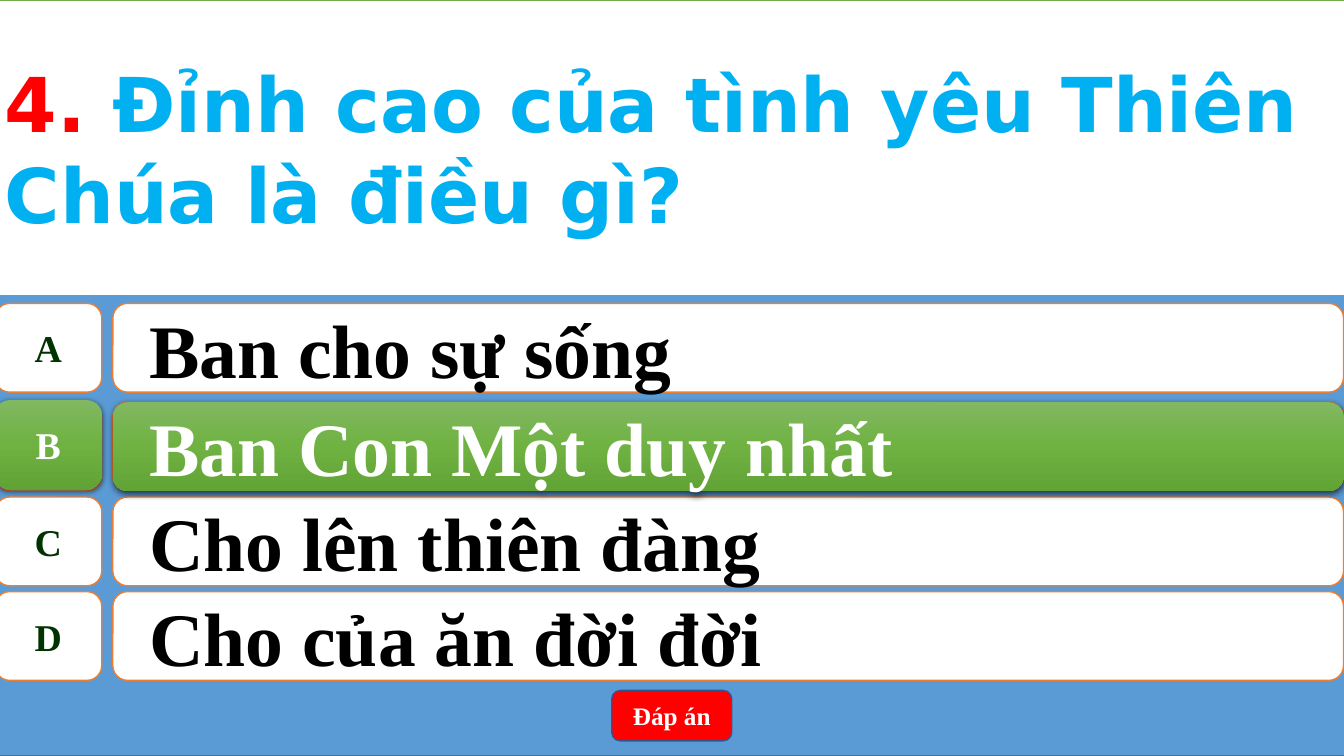
import copy
import lxml.etree
import pptx
import pptx.dml.color
import pptx.enum.shapes
import pptx.enum.text
import pptx.oxml
import pptx.oxml.ns
import pptx.util

Pt = pptx.util.Pt
qn = pptx.oxml.ns.qn
KIND = pptx.enum.shapes.MSO_SHAPE
ALIGN = pptx.enum.text.PP_ALIGN

HUES = {
    "blue": "5B9BD5", "navy": "43739E", "white": "FFFFFF", "orange": "ED7D31",
    "dark": "003300", "black": "000000", "red": "FF0000", "edge": "325491",
    "green": "70AD47", "sky": "00B0F0",
    "light": "81B861", "mid": "6FB242", "deep": "62A336",
}
SERIF = "Times New Roman"
SANS = "DejaVu Sans"
LEFT, WIDE = -3.6, 964.1
TAG_W, BAR_X, BAR_W, ROW_H = 76.3, 80.6, 879.1, 63.4


class Quiz:
    def __init__(self, deck):
        self.slide = deck.slides.add_slide(deck.slide_layouts[6])

    def hue(self, name):
        return pptx.dml.color.RGBColor.from_string(HUES[name])

    def box(self, kind, place, fill, line=None, home=None):
        shape = (home or self.slide).shapes.add_shape(kind, *map(Pt, place))
        shape.shadow.inherit = False
        if fill == "glow":
            self.glow(shape)
        else:
            shape.fill.solid()
            shape.fill.fore_color.rgb = self.hue(fill)
        if line:
            shape.line.color.rgb = self.hue(line)
            shape.line.width = Pt(1)
        else:
            shape.line.fill.background()
        return shape

    def glow(self, shape):
        shape.fill.gradient()
        shape.fill.gradient_angle = 270
        props = shape._element.spPr
        stops = props.find(qn("a:gradFill")).find(qn("a:gsLst"))
        stops.insert(1, copy.deepcopy(stops[0]))
        for stop, name, spot in zip(shape.fill.gradient_stops,
                                    ("light", "mid", "deep"), (0, 0.5, 1)):
            stop.color.rgb = self.hue(name)
            stop.position = spot
        shade = lxml.etree.SubElement(
            props.find(qn("a:effectLst")), qn("a:outerShdw"),
            blurRad=str(Pt(4.5)), dist=str(Pt(1.5)), dir="5400000",
            algn="ctr", rotWithShape="0")
        tint = lxml.etree.SubElement(shade, qn("a:srgbClr"), val=HUES["black"])
        lxml.etree.SubElement(tint, qn("a:alpha"), val="63000")

    def text(self, shape, runs, size, font=SERIF, align=ALIGN.CENTER, wrap=True):
        frame = shape.text_frame
        frame.word_wrap = wrap
        frame.vertical_anchor = pptx.enum.text.MSO_ANCHOR.MIDDLE
        para = frame.paragraphs[0]
        para.alignment = align
        for words, name in runs:
            run = para.add_run()
            run.text = words
            run.font.size = Pt(size)
            run.font.name = font
            run.font.bold = True
            run.font.color.rgb = self.hue(name)
        return para

    def row(self, mark, words, top, tag_top=None, lit=False):
        pair = self.slide.shapes.add_group_shape()
        fill, line = ("glow", None) if lit else ("white", "orange")
        tag = self.box(KIND.FLOWCHART_ALTERNATE_PROCESS,
                       (LEFT, tag_top or top, TAG_W, ROW_H), fill, line, pair)
        self.text(tag, [(mark, "white" if lit else "dark")], 27, wrap=False)
        bar = self.box(KIND.ROUNDED_RECTANGLE,
                       (BAR_X, top, BAR_W, ROW_H), fill, line, pair)
        para = self.text(bar, [(words, "white" if lit else "black")], 54,
                         align=ALIGN.LEFT)
        para.level = 1
        props = para._p.get_or_add_pPr()
        props.set("marL", str(Pt(36)))
        props.set("indent", str(Pt(-20.2)))


def main():
    deck = pptx.Presentation()
    deck.slide_width, deck.slide_height = Pt(960), Pt(540)
    quiz = Quiz(deck)
    quiz.box(KIND.RECTANGLE, (LEFT, 0, WIDE, 540), "blue", "navy")

    rows = [
        ("A", "Ban cho sự sống", 216.7),
        ("B", "Ban Con Một duy nhất", 287.3),
        ("C", "Cho lên thiên đàng", 355),
        ("D", "Cho của ăn đời đời", 422.6),
    ]
    for row in rows:
        quiz.row(*row)
    quiz.row(*rows[1], tag_top=285.8, lit=True)

    key = quiz.box(KIND.ROUNDED_RECTANGLE, (437, 493.2, 85.7, 36), "red", "edge")
    quiz.text(key, [("Đáp án", "white")], 18)

    head = quiz.box(KIND.RECTANGLE, (LEFT, 0, WIDE, 211), "white", "green")
    quiz.text(head, [("4. ", "red"),
                     ("Đỉnh cao của tình yêu Thiên Chúa là điều gì?", "sky")],
              54, SANS, ALIGN.LEFT)
    deck.save("out.pptx")


if __name__ == "__main__":
    main()
